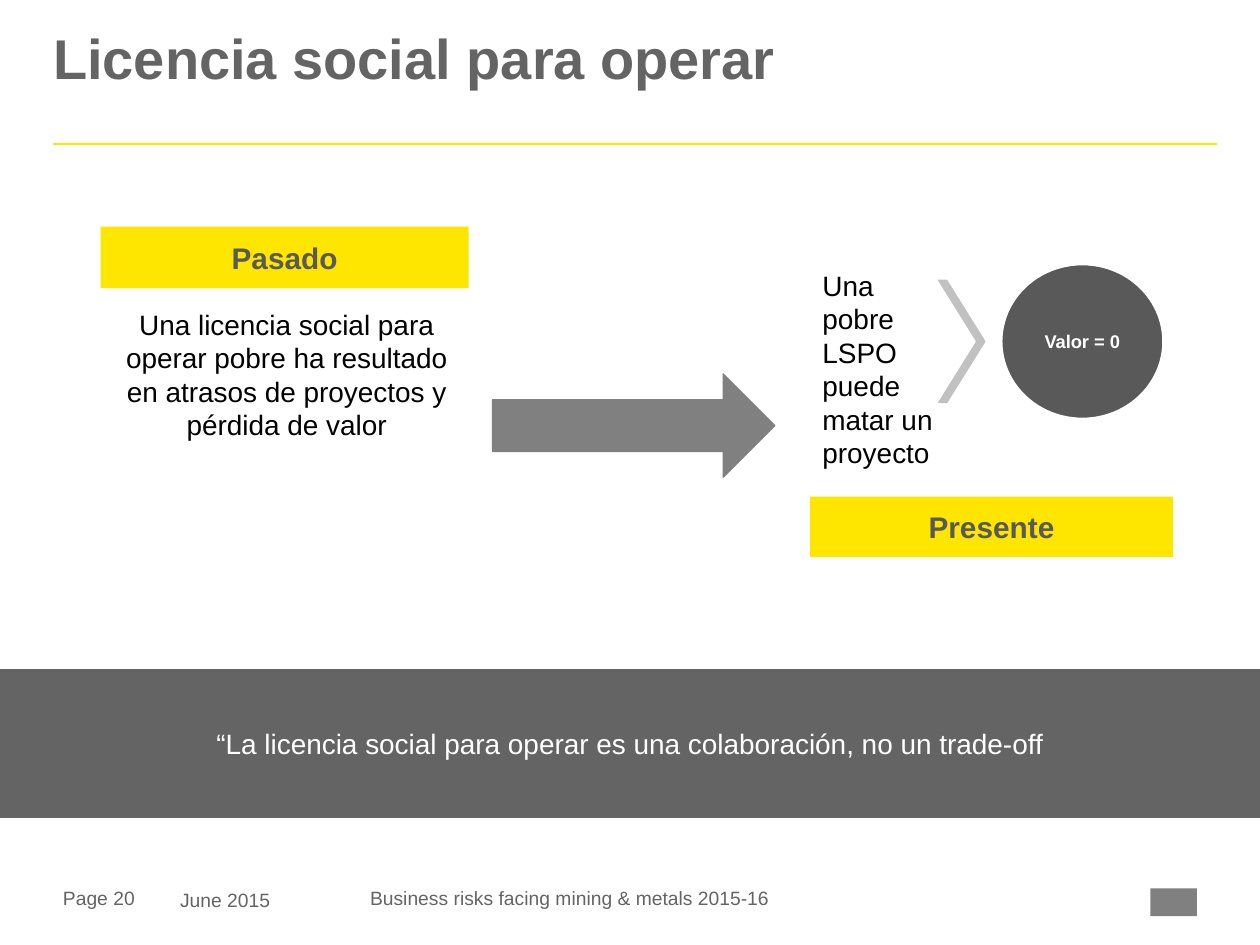
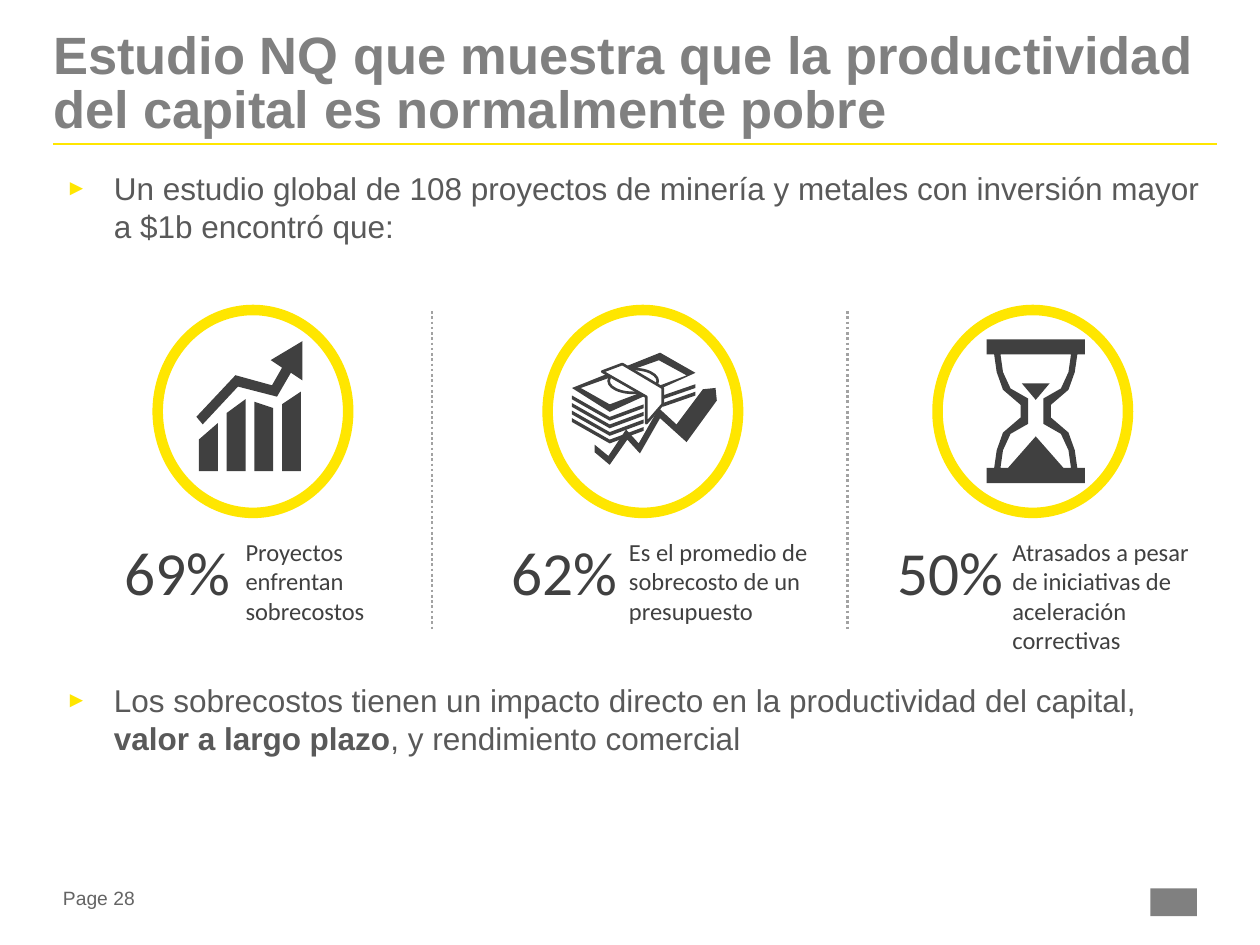
from lxml.etree import SubElement as Sub
from pptx import Presentation
from pptx.dml.color import RGBColor
from pptx.enum.dml import MSO_LINE as Dash
from pptx.enum.shapes import MSO_CONNECTOR as Conn, MSO_SHAPE as Form
from pptx.enum.text import MSO_ANCHOR as Anchor, MSO_AUTO_SIZE as Fit, PP_ALIGN as Align
from pptx.oxml.ns import qn
from pptx.util import Cm, Pt

# Shared colours and left edge
YELLOW, WHITE, BLACK = "FFE600", "FFFFFF", "000000"
SLATE, GREY, DARK, INK = "646464", "808080", "595959", "404040"
SILVER, DOT = "C1C1C1", "A2A2A2"
EDGE, SPAN = 1.07, 23.47
UNIT = Cm(2.54) / 100  # icon grid


def color(code):
    return RGBColor.from_string(code)


def place(shape, box):
    shape.left, shape.top, shape.width, shape.height = map(Cm, box)


def style(par, size, ink, bold=None, font="Arial", align=Align.LEFT,
          before=0, after=0, lead=None):
    face = par.font
    face.name, face.size, face.bold = font, Pt(size), bold
    face.color.rgb = color(ink)
    par.alignment = align
    par.space_before, par.space_after = Pt(before), Pt(after)
    if lead:
        par.line_spacing = lead


def frame_of(shape, pad=None, anchor=Anchor.TOP):
    frame = shape.text_frame
    frame.word_wrap, frame.auto_size = True, Fit.NONE
    frame.vertical_anchor = anchor
    if pad is not None:
        frame.margin_left = frame.margin_right = Cm(pad)
        frame.margin_top = frame.margin_bottom = Cm(pad)
    return frame


def write(shape, text, size, ink, pad=None, anchor=Anchor.TOP, **look):
    frame = frame_of(shape, pad, anchor)
    frame.text = text
    style(frame.paragraphs[0], size, ink, **look)


def label(slide, box, text, size, ink, **look):
    write(slide.shapes.add_textbox(*map(Cm, box)), text, size, ink, **look)


def paint(shape, fill=None, line=None, width=0.75):
    shape.shadow.inherit = False
    if fill:
        shape.fill.solid()
        shape.fill.fore_color.rgb = color(fill)
    else:
        shape.fill.background()
    if line:
        shape.line.color.rgb = color(line)
        shape.line.width = Pt(width)
    else:
        shape.line.fill.background()


def block(slide, form, box, *look):
    shape = slide.shapes.add_shape(form, *map(Cm, box))
    paint(shape, *look)
    return shape


def rule(slide, start, end, ink, dash=None):
    line = slide.shapes.add_connector(Conn.STRAIGHT, *map(Cm, start + end))
    line.line.color.rgb = color(ink)
    line.line.width = Pt(1.5)
    if dash:
        line.line.dash_style = dash
    Sub(line._element.spPr, qn("a:effectLst"))


def icon(slide, spot, loops, *look):
    first, *rest = loops
    pen = slide.shapes.build_freeform(*first[0], scale=UNIT)
    pen.add_line_segments(first[1:])
    for loop in rest:
        pen.move_to(*loop[0])
        pen.add_line_segments(loop[1:])
    paint(pen.convert_to_shape(*map(Cm, spot)), *(look or (INK,)))


def growth(slide, spot):
    arrow = [(33, 36), (64, 44), (75, 25), (84, 31), (84, 0), (59, 15),
             (68, 21), (60, 35), (31, 27), (0, 60), (5, 66)]
    bars = []
    for i, (left, right) in enumerate([(78, 65), (57, 46), (48, 53), (50, 40)]):
        x = 2 + 22 * i
        bars.append([(x, 103), (x, left), (x + 15, right), (x + 15, 103)])
    icon(slide, spot, [arrow] + bars)


def money(slide, spot):
    # Top note, its face and the edges of the notes below
    loops = [[(0, 28), (70, 0), (98, 16), (30, 47)],
             [(7, 28), (69, 6), (91, 18), (30, 41)]]
    for y in range(34, 53, 6):
        loops.append([(0, y), (30, y + 17), (57, y + 7),
                      (57, y + 10), (30, y + 20), (0, y + 3)])
    for y in (25, 31):
        loops.append([(72, y + 9), (98, y), (98, y + 3), (72, y + 12)])
    icon(slide, spot, loops)
    # Seal, band and trend line
    left, top = spot
    block(slide, Form.OVAL, (left + 0.74, top + 0.33, 0.99, 0.48),
          None, INK, 1.5)
    icon(slide, spot, [[(24, 15), (40, 9), (72, 28), (72, 41), (59, 56),
                        (59, 35)]], WHITE, INK, 1.5)
    icon(slide, spot, [[(18, 73), (29, 82), (43, 61), (53, 72), (69, 44),
                        (83, 57), (104, 29), (114, 28), (115, 38), (91, 71),
                        (70, 52), (54, 80), (44, 69), (30, 89), (18, 79)]])


def mirror(arc):
    """Complete an outline from its upper right quarter, centred on zero."""
    back = arc[::-1]
    return (arc + [(x, -y) for x, y in back]
            + [(-x, -y) for x, y in arc] + [(-x, y) for x, y in back])


def glass(slide, spot):
    body = [(39, -57), (39, -45), (33, -45), (31, -31), (26, -17), (12, -5)]
    inner = [(28, -45), (26, -31), (20, -18), (6, -10)]
    sand = [[(w, y), (0, tip), (-w, y)]
            for w, y, tip in [(11, -22, -9), (22, 45, 20)]]
    icon(slide, spot, [mirror(body), mirror(inner)] + sand)


def bullet(holder, box, parts, before=0):
    """Fill a body placeholder with one bullet; parts are (text, bold)."""
    place(holder, box)
    par = frame_of(holder).paragraphs[0]
    for text, bold in parts:
        run = par.add_run()
        run.text, run.font.bold = text, bold
    style(par, 18, DARK, before=before)
    props = par._p.get_or_add_pPr()
    props.set("marL", str(Cm(0.97)))
    props.set("indent", str(Cm(-0.97)))
    Sub(Sub(props, qn("a:buClr")), qn("a:srgbClr"), val=YELLOW)
    Sub(props, qn("a:buSzPct"), val="70000")
    Sub(props, qn("a:buFont"), typeface="Arial")
    Sub(props, qn("a:buChar"), char="►")


def start(deck, layout, title, top, size, ink, page):
    """Add a slide with its title, yellow rule, page number and mark."""
    slide = deck.slides.add_slide(deck.slide_layouts[layout])
    head = slide.shapes.title
    place(head, (EDGE, top, SPAN, 1.52))
    write(head, title, size, ink, pad=0, bold=True, lead=0.85)
    rule(slide, (EDGE, 2.9), (EDGE + SPAN, 2.9), YELLOW)
    label(slide, (1.27, 17.81, 2.01, 0.56), f"Page {page}", 11, SLATE,
          pad=0, anchor=Anchor.MIDDLE)
    block(slide, Form.RECTANGLE, (23.19, 17.91, 0.94, 0.56), GREY)
    return slide


def tag(slide, box, text):
    write(block(slide, Form.RECTANGLE, box, YELLOW), text, 17, DARK, pad=0.25,
          anchor=Anchor.MIDDLE, bold=True, align=Align.CENTER,
          before=1.8, after=1.8)


def stat(slide, i, value, text):
    """Ring, percentage and note of the finding in column i."""
    block(slide, Form.OVAL, (3.18 + 7.86 * i, 6.25, 3.84, 4.09),
          None, YELLOW, 6)
    look = dict(pad=0, font="Calibri", before=2.6, after=2.6)
    label(slide, (1.65 + 7.79 * i, 10.57, 3, 1.45), value, 35, INK,
          align=Align.RIGHT, lead=1.14, **look)
    label(slide, (4.95 + 7.73 * i, 10.82, 3.7, 1.45), text, 14, INK, **look)


def licence(deck):
    slide = start(deck, 5, "Licencia social para operar", 0.69, 32, SLATE, 20)
    label(slide, (7.21, 17.75, 13.28, 0.61),
          "Business risks facing mining & metals 2015-16", 11, SLATE)
    label(slide, (3.38, 17.78, 3.3, 0.56), "June 2015", 11, SLATE)

    # Past
    tag(slide, (2.03, 4.57, 7.42, 1.24), "Pasado")
    label(slide, (2.11, 6.07, 7.34, 3),
          "Una licencia social para operar pobre ha resultado "
          "en atrasos de proyectos y pérdida de valor",
          16, BLACK, align=Align.CENTER)
    block(slide, Form.RIGHT_ARROW, (9.93, 7.54, 5.69, 2.08), GREY, GREY)

    # Present
    tag(slide, (16.33, 10.01, 7.32, 1.22), "Presente")
    label(slide, (16.33, 5.28, 2.82, 4.37),
          "Una pobre LSPO puede matar un proyecto", 16, BLACK)
    tip = block(slide, Form.CHEVRON, (18.9, 5.64, 0.97, 2.49), SILVER)
    tip.adjustments[0] = 0.8
    worth = block(slide, Form.OVAL, (20.17, 5.31, 3.3, 3.15), DARK, WHITE, 2.25)
    write(worth, "Valor = 0", 10.5, WHITE, pad=0, anchor=Anchor.MIDDLE,
          bold=True, align=Align.CENTER)

    # Quote band
    band = block(slide, Form.RECTANGLE, (0, 13.49, 25.4, 3), SLATE)
    write(band, "“La licencia social para operar es una colaboración, "
          "no un trade-off", 16, WHITE, anchor=Anchor.MIDDLE,
          align=Align.CENTER, after=4)


def study(deck):
    slide = start(deck, 3, "Estudio NQ que muestra que la productividad "
                  "del capital es normalmente pobre", 0.64, 30, GREY, 28)
    intro, close = list(slide.placeholders)[1:3]
    bullet(intro, (EDGE, 3.28, SPAN, 1.8),
           [("Un estudio global de 108 proyectos de minería y metales "
             "con inversión mayor a $1b encontró que:", None)])
    bullet(close, (EDGE, 13.61, 22.86, 2.11),
           [("Los sobrecostos tienen un impacto directo en la "
             "productividad del capital, ", None),
            ("valor a largo plazo", True),
            (", y rendimiento comercial", None)], before=3.6)

    # Findings
    for i, (value, text) in enumerate([
        ("69%", "Proyectos enfrentan sobrecostos"),
        ("62%", "Es el promedio de sobrecosto de un presupuesto"),
        ("50%", "Atrasados a pesar de iniciativas de aceleración correctivas"),
    ]):
        stat(slide, i, value, text)
    for x in (8.71, 17.09):
        rule(slide, (x, 6.27), (x, 12.73), DOT, Dash.ROUND_DOT)
    growth(slide, (3.96, 6.88))
    money(slide, (11.53, 7.11))
    glass(slide, (20.88, 8.29))


def main():
    deck = Presentation()
    deck.slide_width, deck.slide_height = Cm(25.4), Cm(19.05)
    licence(deck)
    study(deck)
    deck.save("out.pptx")


if __name__ == "__main__":
    main()
